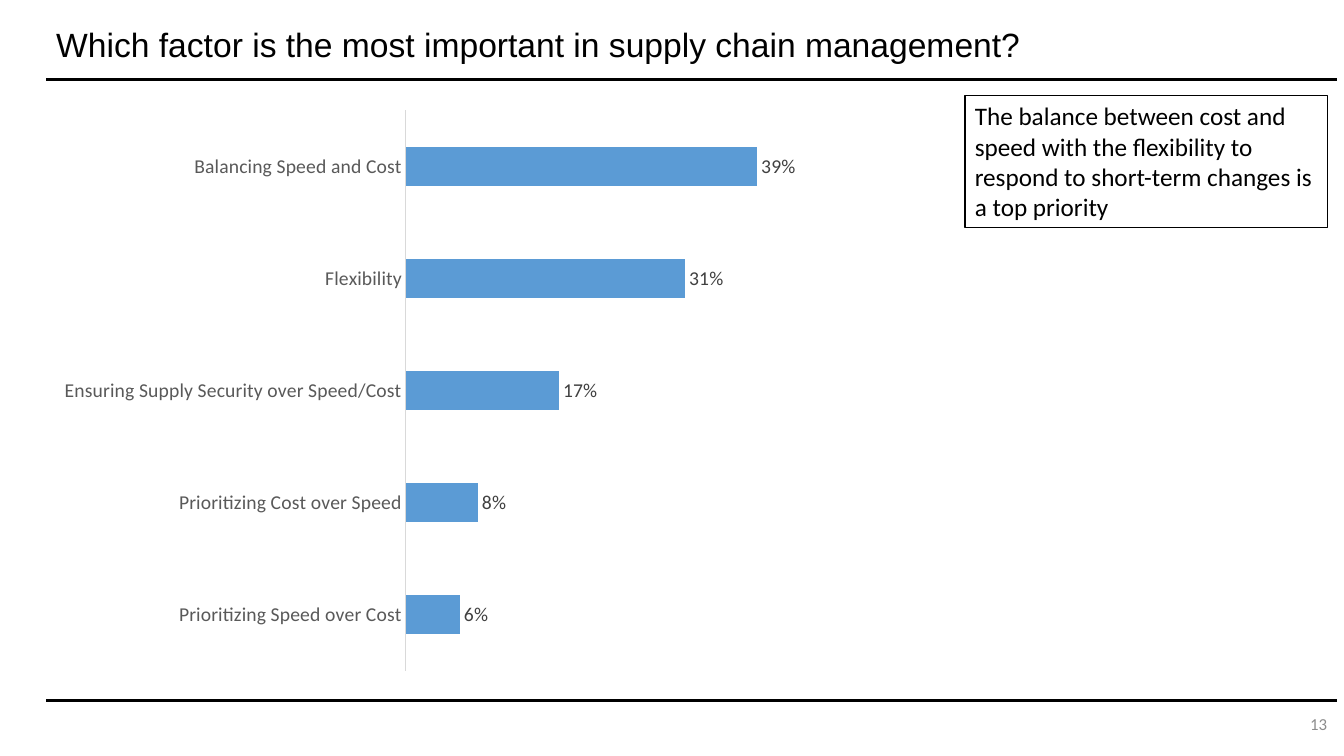
from dataclasses import dataclass

from lxml.etree import SubElement
from pptx import Presentation
from pptx.chart.data import CategoryChartData as Data
from pptx.dml.color import RGBColor as RGB
from pptx.enum.chart import XL_CHART_TYPE as Kind
from pptx.enum.chart import XL_LABEL_POSITION as Spot
from pptx.enum.chart import XL_TICK_LABEL_POSITION as Tick
from pptx.enum.chart import XL_TICK_MARK as Mark
from pptx.enum.shapes import MSO_CONNECTOR as Conn
from pptx.enum.shapes import MSO_SHAPE as Form
from pptx.enum.text import MSO_ANCHOR as Anchor
from pptx.enum.text import PP_ALIGN as Align
from pptx.oxml.ns import qn
from pptx.util import Inches, Pt


@dataclass(frozen=True)
class Theme:
    ink: str = "000000"
    paper: str = "FFFFFF"
    bar: str = "5B9BD5"
    label: str = "404040"
    tick: str = "595959"
    rule: str = "D9D9D9"
    faint: str = "8C8C8C"
    head: str = "Arial"
    body: str = "Calibri"
    title: int = 24
    note: int = 18
    chart: int = 14
    small: int = 12


def style(font, size, color, name):
    font.size, font.name = Pt(size), name
    font.color.rgb = RGB.from_string(color)


def write(frame, text, size, color, name, align=Align.LEFT,
          anchor=Anchor.TOP, space=None):
    frame.word_wrap = True
    frame.vertical_anchor = anchor
    para = frame.paragraphs[0]
    para.alignment, para.line_spacing = align, space
    run = para.add_run()
    run.text = text
    style(run.font, size, color, name)


class Page:
    def __init__(self, slide, theme):
        self.shapes, self.theme = slide.shapes, theme

    def line(self, left, right, top):
        wire = self.shapes.add_connector(
            Conn.STRAIGHT, *map(Inches, (left, top, right, top)))
        wire.line.color.rgb = RGB.from_string(self.theme.ink)
        wire.line.width = Pt(0)
        SubElement(wire._element.spPr, qn("a:effectLst"))

    def text(self, area, text, **form):
        box = self.shapes.add_textbox(*map(Inches, area))
        write(box.text_frame, text, **form)

    def panel(self, area, text, **form):
        box = self.shapes.add_shape(Form.RECTANGLE, *map(Inches, area))
        box.shadow.inherit = False
        box.fill.solid()
        box.fill.fore_color.rgb = RGB.from_string(self.theme.paper)
        box.line.color.rgb = RGB.from_string(self.theme.ink)
        box.line.width = Pt(1)
        write(box.text_frame, text, **form)

    def bars(self, area, shares):
        look = self.theme
        data = Data(number_format="0%")
        data.categories = list(shares)
        data.add_series("Series 1", list(shares.values()))
        chart = self.shapes.add_chart(
            Kind.BAR_CLUSTERED, *map(Inches, area), data).chart
        chart.has_legend = chart.has_title = False
        style(chart.font, look.chart, look.ink, look.body)

        # Axes
        names, scale = chart.category_axis, chart.value_axis
        names.major_tick_mark = names.minor_tick_mark = Mark.NONE
        names.tick_label_position = Tick.NEXT_TO_AXIS
        names.has_major_gridlines = False
        names.format.line.color.rgb = RGB.from_string(look.rule)
        names.format.line.width = Pt(0.75)
        style(names.tick_labels.font, look.chart, look.tick, look.body)
        scale.visible = scale.has_major_gridlines = False
        scale.minimum_scale, scale.maximum_scale = 0, 0.6
        scale.major_unit = 0.2

        # Bars and their labels
        plot = chart.plots[0]
        plot.gap_width, plot.vary_by_categories = 182, False
        fill = plot.series[0].format.fill
        fill.solid()
        fill.fore_color.rgb = RGB.from_string(look.bar)
        labels = plot.series[0].data_labels
        labels.show_value, labels.position = True, Spot.OUTSIDE_END
        labels.number_format = "0%"
        labels.number_format_is_linked = False
        style(labels.font, look.chart, look.label, look.body)


def main():
    deck = Presentation()
    deck.slide_width, deck.slide_height = Inches(13.33), Inches(7.5)
    theme = Theme()
    page = Page(deck.slides.add_slide(deck.slide_layouts[6]), theme)
    left, right = 0.46, 13.26

    # Frame: rules, page number and title
    for top in (0.79, 6.95):
        page.line(left, right, top)
    page.text((9.42, 7.02, 3.84, 0.33), "13", size=theme.small,
              color=theme.faint, name=theme.body, align=Align.RIGHT,
              anchor=Anchor.MIDDLE)
    page.text((left, 0.19, 10.03, 0.54),
              "Which factor is the most important in supply chain management?",
              size=theme.title, color=theme.ink, name=theme.head,
              anchor=Anchor.MIDDLE, space=0.9)

    # Survey answers, from the bottom bar up
    page.bars((left, 0.98, 9.11, 5.79), {
        "Prioritizing Speed over Cost": 0.06,
        "Prioritizing Cost over Speed": 0.08,
        "Ensuring Supply Security over Speed/Cost": 0.17,
        "Flexibility": 0.31,
        "Balancing Speed and Cost": 0.39,
    })

    # Key finding
    page.panel((9.57, 0.95, 3.6, 1.31),
               "The balance between cost and speed with the flexibility to "
               "respond to short-term changes is a top priority",
               size=theme.note, color=theme.ink, name=theme.body)
    deck.save("out.pptx")


if __name__ == "__main__":
    main()
